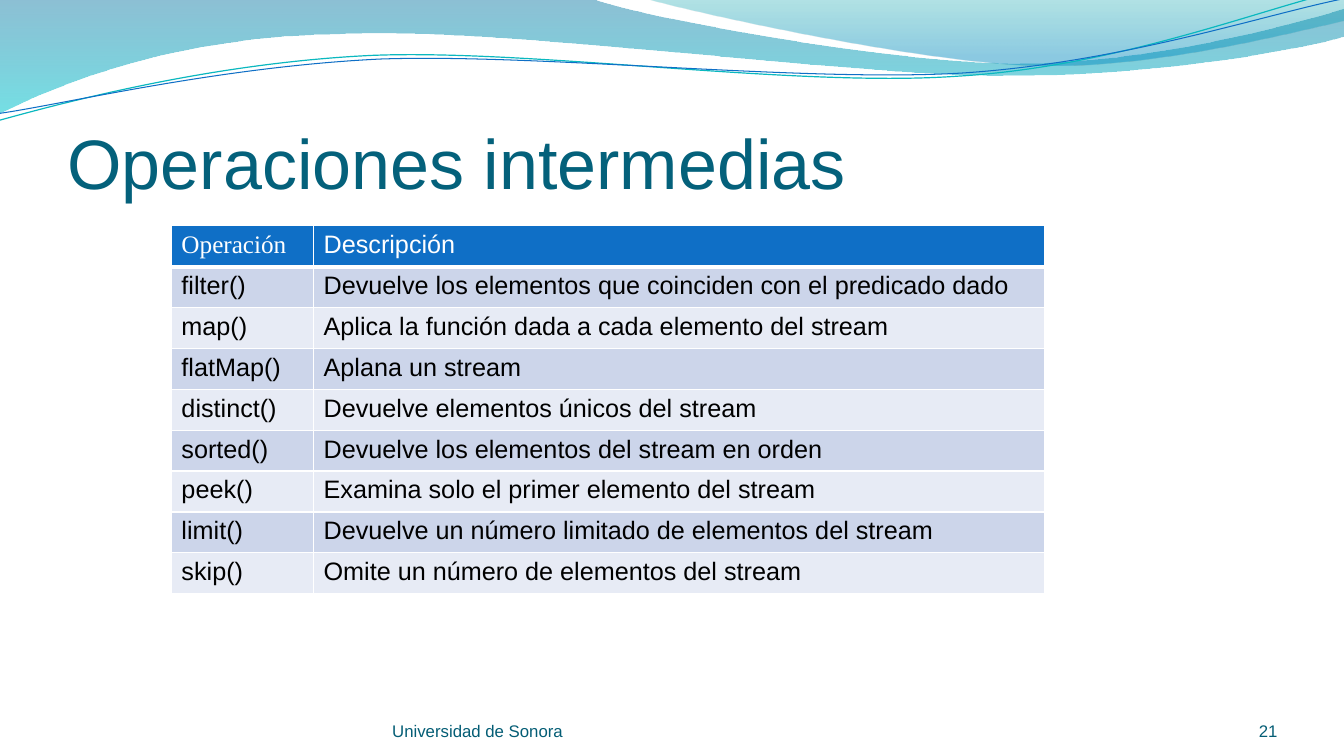
"""Build the slide that lists the intermediate stream operations."""
from dataclasses import dataclass

from lxml import etree
from pptx import Presentation
from pptx.dml.color import RGBColor
from pptx.enum.text import MSO_ANCHOR, PP_ALIGN
from pptx.oxml.ns import qn
from pptx.util import Inches, Pt

BOTTOM = MSO_ANCHOR.BOTTOM
LEFT, RIGHT = PP_ALIGN.LEFT, PP_ALIGN.RIGHT

WHITE = RGBColor(0xFF, 0xFF, 0xFF)
BLACK = RGBColor(0x00, 0x00, 0x00)
TITLE_TEAL = RGBColor(0x04, 0x61, 0x7B)
FOOTER_TEAL = RGBColor(0x04, 0x5D, 0x75)
BLUE = RGBColor(0x0F, 0x6F, 0xC6)
AQUA = RGBColor(0x0A, 0xB8, 0xBF)
BAND_DARK = RGBColor(0xCC, 0xD5, 0xEA)
BAND_LIGHT = RGBColor(0xE7, 0xEB, 0xF5)
DEEP_BLUE = RGBColor(0x00, 0x74, 0xA1)
CYAN = RGBColor(0x00, 0xC6, 0xCF)
SEA_GREEN = RGBColor(0x00, 0xA1, 0xA9)
SKY_BLUE = RGBColor(0x00, 0x8B, 0xBF)

LINE_TILT = -2.7
ROW_HEIGHT = 3.65 / 9
COLUMN_WIDTHS = (1.41, 7.25)
OPERATIONS = (
    ("Operación", "Descripción"),
    ("filter()", "Devuelve los elementos que coinciden con el predicado dado"),
    ("map()", "Aplica la función dada a cada elemento del stream"),
    ("flatMap()", "Aplana un stream"),
    ("distinct()", "Devuelve elementos únicos del stream"),
    ("sorted()", "Devuelve los elementos del stream en orden"),
    ("peek()", "Examina solo el primer elemento del stream"),
    ("limit()", "Devuelve un número limitado de elementos del stream"),
    ("skip()", "Omite un número de elementos del stream"),
)

Point = tuple[float, float]


@dataclass
class Stop:
    """A gradient stop: position from 0 to 1 and opacity in percent."""
    position: float
    color: RGBColor
    opacity: int


@dataclass
class Wave:
    """An outline of lines (one point) and cubic curves (three points)."""
    start: Point
    segments: tuple[tuple[Point, ...], ...]
    stops: tuple[Stop, ...] = ()
    color: RGBColor = WHITE
    width: float = 0


@dataclass
class Label:
    """A line of text in a bottom-anchored box."""
    text: str
    box: tuple[float, float, float, float]
    size: int
    color: RGBColor
    align: PP_ALIGN = LEFT
    top_inset: float = 0


WAVES = (
    Wave((0, 0), (
        ((5.87, -0.01),),
        ((6.34, 0.17), (8.85, 0.63), (10.11, 0.63)),
        ((11.38, 0.63), (12.78, 0.26), (13.33, 0.09)),
        ((13.35, 0.36),),
        ((13.11, 0.44), (11.6, 0.76), (9.94, 0.75)),
        ((8.29, 0.75), (5.09, 0.28), (3.43, 0.34)),
        ((1.72, 0.36), (0.61, 0.83), (-0.01, 1.13)),
        ((0, 0),),
    ), stops=(Stop(0, DEEP_BLUE, 45), Stop(1, CYAN, 55))),
    Wave((6.39, -0.01), (
        ((6.79, 0.11), (9.09, 0.62), (10.25, 0.65)),
        ((11.41, 0.69), (12.82, 0.32), (13.33, 0.21)),
        ((13.33, 0),),
        ((6.39, -0.01),),
    ), stops=(Stop(0, SEA_GREEN, 30), Stop(0.8, SKY_BLUE, 45))),
    Wave((-0.03, 0.88), (
        ((0.63, 0.73), (2.11, 0.41), (3.69, 0.41)),
        ((5.28, 0.42), (7.88, 0.93), (9.49, 0.89)),
        ((11.09, 0.87), (12.54, 0.36), (13.33, 0.22)),
    ), color=AQUA, width=0.85),
    Wave((-0.02, 0.81), (
        ((0.62, 0.75), (2.18, 0.45), (3.78, 0.45)),
        ((5.37, 0.47), (7.95, 0.88), (9.54, 0.86)),
        ((11.14, 0.83), (12.56, 0.42), (13.36, 0.3)),
    ), color=BLUE, width=0.75),
)
LABELS = (
    Label("Operaciones intermedias", (0.67, 0.77, 12, 1.25), 50, TITLE_TEAL, top_inset=0.05),
    Label("Universidad de Sonora", (3.89, 6.95, 4.89, 0.4), 12, FOOTER_TEAL),
    Label("21", (11.56, 6.95, 1.11, 0.4), 12, FOOTER_TEAL, RIGHT),
)


def bend_curves(sp, wave: Wave) -> None:
    """Join the line steps of each three-point segment into one cubic curve."""
    steps = iter(list(sp._element.iter(qn("a:lnTo"))))
    for segment in wave.segments:
        group = [next(steps) for _ in segment]
        if len(group) == 3:
            curve = etree.Element(qn("a:cubicBezTo"))
            group[0].addprevious(curve)
            for step in group:
                curve.append(step[0])
                step.getparent().remove(step)


def add_wave(shapes, wave: Wave) -> None:
    """Draw a gradient-filled wave, or a tilted line if it has no stops."""
    points = [wave.start] + [point for segment in wave.segments for point in segment]
    vertices = [(Inches(x), Inches(y)) for x, y in points]
    builder = shapes.build_freeform(*vertices[0])
    builder.add_line_segments(vertices[1:], close=bool(wave.stops))
    sp = builder.convert_to_shape()
    bend_curves(sp, wave)
    sp.shadow.inherit = False
    if not wave.stops:
        sp.rotation = LINE_TILT
        sp.fill.background()
        sp.line.color.rgb = wave.color
        sp.line.width = Pt(wave.width)
        return
    sp.line.fill.background()
    sp.fill.gradient()
    sp.fill.gradient_angle = 270
    for target, stop in zip(sp.fill.gradient_stops, wave.stops):
        target.position = stop.position
        target.color.rgb = stop.color
    for color, stop in zip(sp._element.spPr.iter(qn("a:srgbClr")), wave.stops):
        etree.SubElement(color, qn("a:alpha"), val=str(stop.opacity * 1000))


def add_label(shapes, label: Label) -> None:
    """Add a text box for a label."""
    tf = shapes.add_textbox(*map(Inches, label.box)).text_frame
    tf.word_wrap = True
    tf.vertical_anchor = BOTTOM
    tf.margin_left = tf.margin_right = tf.margin_bottom = 0
    tf.margin_top = Inches(label.top_inset)
    p = tf.paragraphs[0]
    p.text = label.text
    p.alignment = label.align
    p.font.name = "Arial"
    p.font.size = Pt(label.size)
    p.font.color.rgb = label.color


def set_borders(cell, top: int, bottom: int) -> None:
    """Give a cell white borders, with the top and bottom widths in points."""
    tc_pr = cell._tc.get_or_add_tcPr()
    for i, (side, width) in enumerate((("L", 1), ("R", 1), ("T", top), ("B", bottom))):
        ln = etree.Element(qn(f"a:ln{side}"), w=str(Pt(width)))
        fill = etree.SubElement(ln, qn("a:solidFill"))
        etree.SubElement(fill, qn("a:srgbClr"), val=str(WHITE))
        tc_pr.insert(i, ln)


def add_operations(shapes) -> None:
    """Add the table of operations with banded rows."""
    rows = len(OPERATIONS)
    table = shapes.add_table(rows, len(COLUMN_WIDTHS), Inches(1.7), Inches(2.24),
                             Inches(sum(COLUMN_WIDTHS)), Inches(ROW_HEIGHT * rows)).table
    for column, width in zip(table.columns, COLUMN_WIDTHS):
        column.width = Inches(width)
    for i, texts in enumerate(OPERATIONS):
        band = BAND_DARK if i % 2 else BAND_LIGHT
        for j, text in enumerate(texts):
            cell = table.cell(i, j)
            cell.fill.solid()
            cell.fill.fore_color.rgb = band if i else BLUE
            set_borders(cell, top=3 if i == 1 else 1, bottom=1 if i else 3)
            p = cell.text_frame.paragraphs[0]
            p.text = text
            p.font.name = "Times New Roman" if i == j == 0 else "Arial"
            p.font.size = Pt(18)
            p.font.bold = False
            p.font.color.rgb = BLACK if i else WHITE


prs = Presentation()
prs.slide_width, prs.slide_height = Inches(13.33), Inches(7.5)
s = prs.slides.add_slide(prs.slide_layouts[6])
for wave in WAVES:
    add_wave(s.shapes, wave)
for label in LABELS:
    add_label(s.shapes, label)
add_operations(s.shapes)
prs.save("out.pptx")
